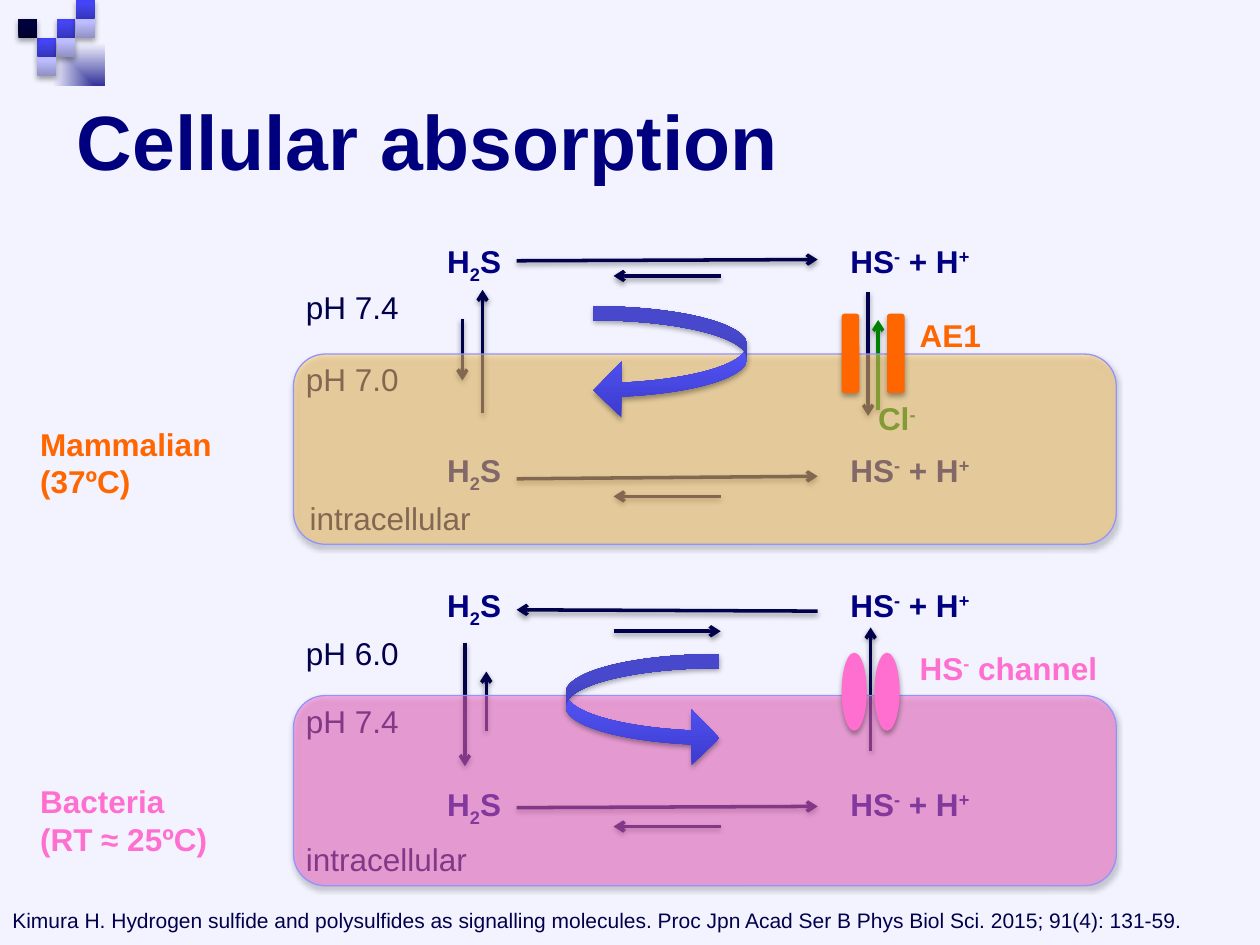
from dataclasses import dataclass
from typing import Optional

import pptx
import pptx.dml.color
import pptx.enum.shapes
import pptx.enum.text
import pptx.oxml
import pptx.oxml.ns
import pptx.util

COLUMNS, ROWS = 100, 75
SHAPES = pptx.enum.shapes.MSO_SHAPE
DRAWING = pptx.oxml.ns.nsdecls("a")


@dataclass(frozen=True)
class Theme:
    font: str = "Arial"
    background: str = "F3F3FF"
    ink: str = "00004B"
    title: str = "00007E"
    species: str = "000080"
    chloride: str = "008000"
    outline: str = "9393FC"
    mammal: str = "FF6600"
    mammal_cell: str = "FFCC66"
    bacteria: str = "FF6FCF"
    blue: tuple = ("3535BC", "4545F4", "4242F9")
    pale: tuple = ("9191C4", "BCBCFF", "BEBEFF")
    dark: tuple = ("00002F", "00003D", "00003D")
    cycle: tuple = ("3B3BCF", "5B5BFF", "5D5DFF")
    title_size: int = 44
    body_size: int = 18
    citation_size: int = 12


@dataclass(frozen=True)
class Run:
    text: str
    baseline: int = 0


@dataclass(frozen=True)
class Reaction:
    """H2S <-> HS- + H+ on one row, with a long and a short arrow."""
    label_row: float
    long_rows: tuple
    short_row: float
    to_left: bool = False


@dataclass(frozen=True)
class Cell:
    name: tuple
    name_row: float
    colour: str
    fill: str
    top: float
    outer_ph: str
    outer_row: float
    inner_ph: str
    inside_at: tuple
    reactions: tuple
    pore_shape: int
    pore_columns: tuple
    pore_row: float
    pore_size: tuple
    pore_label: tuple
    pore_label_at: tuple
    cycle_at: tuple
    cycle_flipped: bool = False


THEME = Theme()
MINUS, PLUS = Run("-", 30), Run("+", 30)
H2S = (Run("H"), Run("2", -25), Run("S"))
IONS = (Run("HS"), MINUS, Run(" + H"), PLUS)

MAMMAL = Cell(
    (("Mammalian (37ºC)"),), 33.2, THEME.mammal, THEME.mammal_cell, 28.1, "pH 7.4", 22.4, "pH 7.0", (23.6, 39.1),
    (Reaction(18.7, (20.7, 20.6), 21.9), Reaction(35.3, (38, 37.8), 39.4)),
    SHAPES.ROUNDED_RECTANGLE, (66.8, 70.4), 24.9, (1.4, 6.3), ("AE1",), (72, 24.6, 13.2, 4), (47.1, 24.3))
BACTERIA = Cell(
    ("Bacteria", "(RT ≈ 25ºC)"), 61.6, THEME.bacteria, THEME.bacteria, 55.2, "pH 6.0", 49.8, "pH 7.4", (23.3, 66.2),
    (Reaction(46, (48.4, 48.5), 50.1, True), Reaction(61.8, (64.1, 64), 65.6)),
    SHAPES.OVAL, (66.8, 69.4), 51.8, (2, 6.2), ((Run("HS"), MINUS, Run(" channel")),), (72, 51, 19.5, 4),
    (44.9, 51.9), True)
CELLS = (MAMMAL, BACTERIA)

# Start column, start row, end column, end row, colour
TRANSPORT = (
    (38.3, 32.8, 38.3, 23, THEME.ink), (36.9, 51, 36.9, 60.8, THEME.ink),
    (68.9, 23.2, 68.9, 33, THEME.ink), (69.1, 59.6, 69.1, 49.8, THEME.ink),
    (36.7, 25.3, 36.7, 30.2, THEME.ink), (38.6, 58, 38.6, 53.3, THEME.ink),
    (69.7, 32.5, 69.7, 25.4, THEME.chloride))

# Column and row in corner squares, gradient
CORNER_SQUARES = (
    (2, 1, THEME.blue), (3, 0, THEME.blue), (3, 1, THEME.pale), (1, 2, THEME.blue),
    (0, 1, THEME.dark), (2, 2, THEME.pale), (1, 3, THEME.pale))

presentation = pptx.Presentation()
presentation.slide_width = pptx.util.Inches(10)
presentation.slide_height = pptx.util.Inches(7.5)
slide = presentation.slides.add_slide(presentation.slide_layouts[6])


def rgb(colour: str) -> pptx.dml.color.RGBColor:
    return pptx.dml.color.RGBColor.from_string(colour)


def place(*lengths: float) -> list:
    """Turn alternating column and row counts into slide lengths."""
    units = (presentation.slide_width / COLUMNS, presentation.slide_height / ROWS)
    return [round(length * units[index % 2]) for index, length in enumerate(lengths)]


def add_text(at: tuple, paragraphs: tuple, *, size: int = THEME.body_size, colour: str = THEME.ink,
             bold: bool = False, anchor=pptx.enum.text.MSO_ANCHOR.TOP) -> None:
    frame = slide.shapes.add_textbox(*place(*at)).text_frame
    frame.word_wrap = True
    frame.vertical_anchor = anchor
    for index, content in enumerate(paragraphs):
        paragraph = frame.add_paragraph() if index else frame.paragraphs[0]
        for part in (Run(content),) if isinstance(content, str) else content:
            run = paragraph.add_run()
            run.text = part.text
            font = run.font
            font.name, font.size, font.bold = THEME.font, pptx.util.Pt(size), bold
            font.color.rgb = rgb(colour)
            if part.baseline:
                run._r.get_or_add_rPr().set("baseline", str(part.baseline * 1000))


def add_shadow(properties, opacity: int, distance: float) -> None:
    properties.append(pptx.oxml.parse_xml(
        f'<a:effectLst {DRAWING}><a:outerShdw blurRad="{pptx.util.Pt(3.1)}" dist="{pptx.util.Pt(distance)}" '
        f'dir="5400000" rotWithShape="0"><a:srgbClr val="000000"><a:alpha val="{opacity * 1000}"/>'
        '</a:srgbClr></a:outerShdw></a:effectLst>'))


def set_gradient(shape, stops: tuple, direction: str) -> None:
    """Fill with (position, colour) stops along a direction given as XML."""
    shape.fill.background()
    properties = shape.element.spPr
    stop_list = "".join(f'<a:gs pos="{position * 1000}"><a:srgbClr val="{colour}"/></a:gs>'
                        for position, colour in stops)
    properties.replace(properties.find(pptx.oxml.ns.qn("a:noFill")), pptx.oxml.parse_xml(
        f'<a:gradFill {DRAWING} rotWithShape="1"><a:gsLst>{stop_list}</a:gsLst>{direction}</a:gradFill>'))


def add_shape(kind: int, at: tuple, fill, *, opacity: int = 100, outline: Optional[str] = None,
              shadow: bool = True):
    """Draw a preset shape; a tuple as fill is an upward gradient."""
    shape = slide.shapes.add_shape(kind, *place(*at))
    if isinstance(fill, tuple):
        set_gradient(shape, tuple(zip((0, 80, 100), fill)), '<a:lin ang="16200000" scaled="0"/>')
    else:
        shape.fill.solid()
        shape.fill.fore_color.rgb = rgb(fill)
    if opacity < 100:
        colour = shape.element.spPr.find(".//" + pptx.oxml.ns.qn("a:srgbClr"))
        colour.append(pptx.oxml.parse_xml(f'<a:alpha {DRAWING} val="{opacity * 1000}"/>'))
    if outline:
        shape.line.color.rgb = rgb(outline)
        shape.line.width = pptx.util.Pt(0.75)
    else:
        shape.line.fill.background()
    if shadow:
        add_shadow(shape.element.spPr, 35, 1.8)
    else:
        shape.shadow.inherit = False
    return shape


def add_arrow(*ends: float, colour: str = THEME.ink) -> None:
    arrow = slide.shapes.add_connector(pptx.enum.shapes.MSO_CONNECTOR.STRAIGHT, *place(*ends))
    arrow.line.color.rgb = rgb(colour)
    arrow.line.width = pptx.util.Pt(2)
    properties = arrow.element.spPr
    properties.find(pptx.oxml.ns.qn("a:ln")).append(
        pptx.oxml.parse_xml(f'<a:tailEnd {DRAWING} type="arrow"/>'))
    add_shadow(properties, 38, 1.6)


def add_corner() -> None:
    glow = add_shape(SHAPES.RECTANGLE, (0, 0, 8.3, 6.8), THEME.background, shadow=False)
    set_gradient(glow, ((0, "333399"), (100, THEME.background)),
                 '<a:path path="rect"><a:fillToRect l="100000" t="100000"/></a:path>')
    for column, row, gradient in CORNER_SQUARES:
        add_shape(SHAPES.RECTANGLE, (1.45 + column * 1.52, row * 1.5, 1.5, 1.5), gradient)


def add_reaction(reaction: Reaction) -> None:
    add_text((34.5, reaction.label_row, 6.5, 4), (H2S,), colour=THEME.species, bold=True)
    add_text((66.5, reaction.label_row, 11.9, 4), (IONS,), colour=THEME.species, bold=True)
    left_row, right_row = reaction.long_rows
    long_arrow = ((41, left_row), (64.9, right_row))
    short_arrow = ((57.2, reaction.short_row), (48.7, reaction.short_row))
    for start, end in (long_arrow, short_arrow):
        add_arrow(*(end + start if reaction.to_left else start + end))


def add_cell_contents(cell: Cell) -> None:
    add_text((2.2, cell.name_row, 16.3, 7.1), cell.name, colour=cell.colour, bold=True)
    add_text((23.3, cell.outer_row, 13.7, 4), (cell.outer_ph,))
    add_text((23.3, cell.top, 13.7, 4), (cell.inner_ph,))
    add_text((*cell.inside_at, 21.7, 4), ("intracellular",))
    for reaction in cell.reactions:
        add_reaction(reaction)


def add_membrane(cell: Cell) -> None:
    add_shape(SHAPES.ROUNDED_RECTANGLE, (23.3, cell.top, 65.3, 15.1), cell.fill, opacity=51,
              outline=THEME.outline)
    for column in cell.pore_columns:
        add_shape(cell.pore_shape, (column, cell.pore_row, *cell.pore_size), cell.colour)
    add_text(cell.pore_label_at, cell.pore_label, colour=cell.colour, bold=True)
    cycle = add_shape(SHAPES.CURVED_LEFT_ARROW, (*cell.cycle_at, 12.2, 8.9), THEME.cycle)
    for index, adjustment in enumerate((0.126, 0.5, 0.25)):
        cycle.adjustments[index] = adjustment
    if cell.cycle_flipped:
        cycle.element.spPr.xfrm.set("flipH", "1")


def main() -> None:
    slide.background.fill.solid()
    slide.background.fill.fore_color.rgb = rgb(THEME.background)
    add_corner()
    add_text((0, 71.5, 100, 3), ("Kimura H. Hydrogen sulfide and polysulfides as signalling molecules. "
                                 "Proc Jpn Acad Ser B Phys Biol Sci. 2015; 91(4): 131-59.",),
             size=THEME.citation_size)
    for cell in CELLS:
        add_cell_contents(cell)
    for *ends, colour in TRANSPORT:
        add_arrow(*ends, colour=colour)
    add_text((68.7, 31.2, 6.5, 4), ((Run("Cl"), MINUS),), colour=THEME.chloride, bold=True)
    for cell in CELLS:
        add_membrane(cell)
    add_text((5.1, 3.6, 94.1, 15), ("Cellular absorption",), size=THEME.title_size, colour=THEME.title,
             bold=True, anchor=pptx.enum.text.MSO_ANCHOR.MIDDLE)
    presentation.save("out.pptx")


if __name__ == "__main__":
    main()
